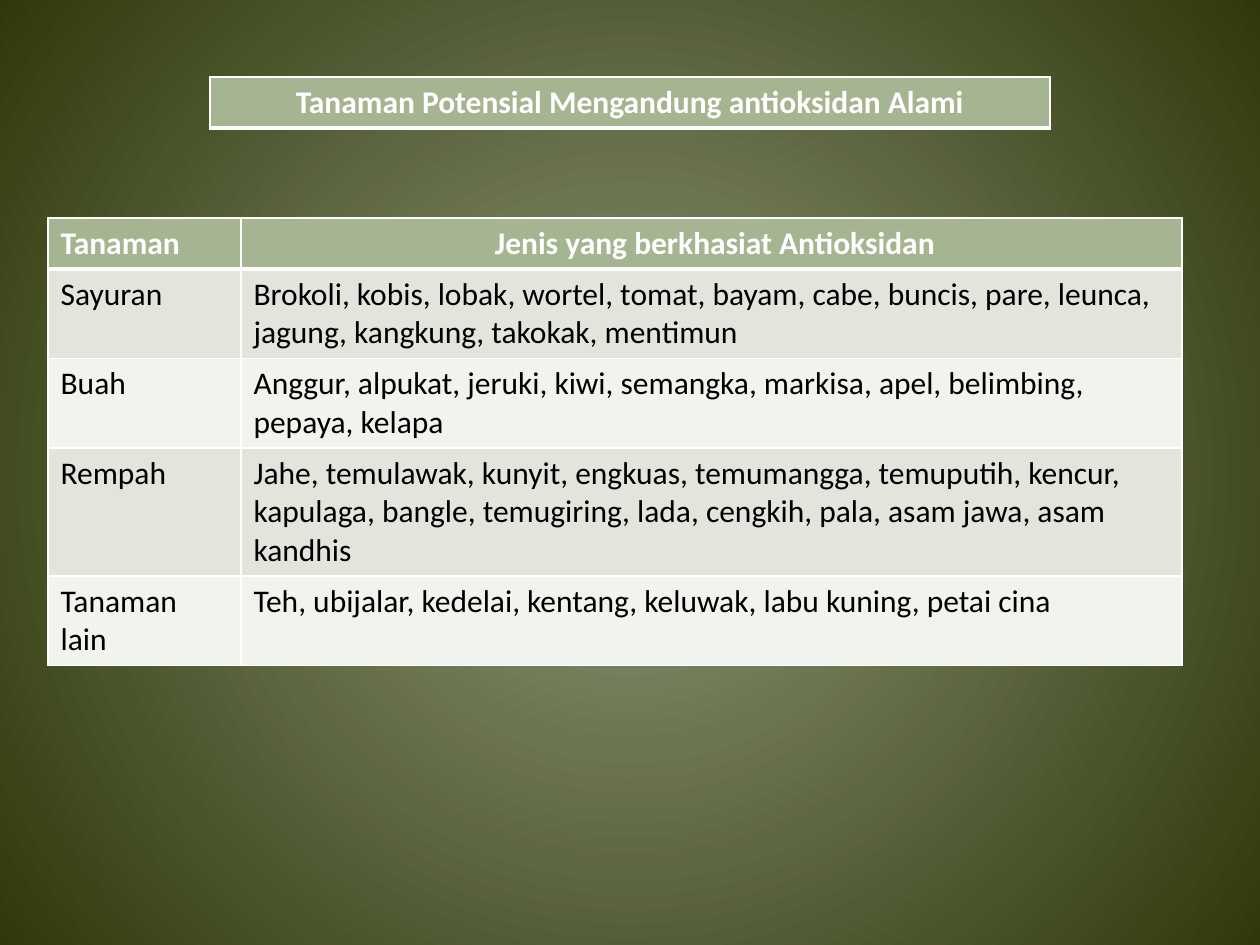
from lxml import etree
from pptx import Presentation
from pptx import util as u
from pptx.dml.color import RGBColor
from pptx.enum import text
from pptx.oxml.ns import qn

THEME = {
    "font": "Calibri", "size": 18,
    "head": "A5B592", "bands": ("E1E5DC", "F0F3EE"),
    "head_text": "FFFFFF", "body_text": "000000", "rule": "FFFFFF",
    "glow": ("8D9677", "2F390B"),
    "thin": 1, "thick": 3,
}

TITLE = [["Tanaman Potensial Mengandung antioksidan Alami"]]
PLANTS = [
    ["Tanaman", " Jenis yang berkhasiat Antioksidan"],
    ["Sayuran", "Brokoli, kobis, lobak, wortel, tomat, bayam, cabe, buncis, pare, "
                "leunca, jagung, kangkung, takokak, mentimun"],
    ["Buah", "Anggur, alpukat, jeruki, kiwi, semangka, markisa, apel, belimbing, "
             "pepaya, kelapa"],
    ["Rempah", "Jahe, temulawak, kunyit, engkuas, temumangga, temuputih, kencur, "
               "kapulaga, bangle, temugiring, lada, cengkih, pala, asam jawa, "
               "asam kandhis"],
    ["Tanaman lain", "Teh, ubijalar, kedelai, kentang, keluwak, labu kuning, petai cina"],
]


def px(n):
    """Turn px into EMU at 126 px to the inch."""
    return u.Emu(round(n * 914400 / 126))


def background(s):
    """Fill the slide with a glow that darkens from its centre."""
    fill = s.background.fill
    fill.gradient()
    for stop, color, position in zip(fill.gradient_stops, THEME["glow"], (0, 1)):
        stop.color.rgb = RGBColor.from_string(color)
        stop.position = position
    grad = s.element.find(".//" + qn("a:gradFill"))
    lin = grad.find(qn("a:lin"))
    if lin is not None:
        grad.remove(lin)
    circle = etree.Element(qn("a:path"), {"path": "circle"})
    grad.find(qn("a:gsLst")).addnext(circle)
    etree.SubElement(circle, qn("a:fillToRect"), dict.fromkeys("ltrb", "50000"))


def borders(cell, widths):
    """Rule the sides of a cell with the given widths in points."""
    pr = cell._tc.get_or_add_tcPr()
    for side in "LRTB":
        ln = etree.SubElement(pr, qn("a:ln" + side), {"w": str(u.Pt(widths[side]))})
        solid = etree.SubElement(ln, qn("a:solidFill"))
        etree.SubElement(solid, qn("a:srgbClr"), {"val": THEME["rule"]})


def style_cell(cell, words, row, align):
    """Write and format one cell of a header row or a banded row."""
    head = row == 0
    widths = dict.fromkeys("LRTB", THEME["thin"])
    if row < 2:
        widths["B" if head else "T"] = THEME["thick"]
    borders(cell, widths)
    cell.fill.solid()
    color = THEME["head"] if head else THEME["bands"][(row - 1) % 2]
    cell.fill.fore_color.rgb = RGBColor.from_string(color)
    p = cell.text_frame.paragraphs[0]
    p.alignment = align
    r = p.add_run()
    r.text = words
    fmt = {"name": THEME["font"], "size": u.Pt(THEME["size"]), "bold": head}
    for name, value in fmt.items():
        setattr(r.font, name, value)
    color = THEME["head_text" if head else "body_text"]
    r.font.color.rgb = RGBColor.from_string(color)


def table(s, box, rows, cols, row_height):
    """Place a table in the box, with its last heading centred."""
    gf = s.shapes.add_table(len(rows), len(cols), *map(px, box))
    t = gf.table
    for col, width in zip(t.columns, cols):
        col.width = px(width)
    for i, words in enumerate(rows):
        t.rows[i].height = px(row_height)
        for j, word in enumerate(words):
            centred = i == 0 and j == len(cols) - 1
            align = text.PP_ALIGN.CENTER if centred else text.PP_ALIGN.LEFT
            style_cell(t.cell(i, j), word, i, align)
    gf.height = px(box[3])


def main():
    """Build the slide and save it."""
    prs = Presentation()
    prs.slide_width, prs.slide_height = px(1260), px(945)
    s = prs.slides.add_slide(prs.slide_layouts[6])
    background(s)
    table(s, (48, 218, 1134, 442), PLANTS, (193, 941), 51)
    table(s, (210, 77, 840, 51), TITLE, (840,), 51)
    prs.save("out.pptx")


if __name__ == "__main__":
    main()
